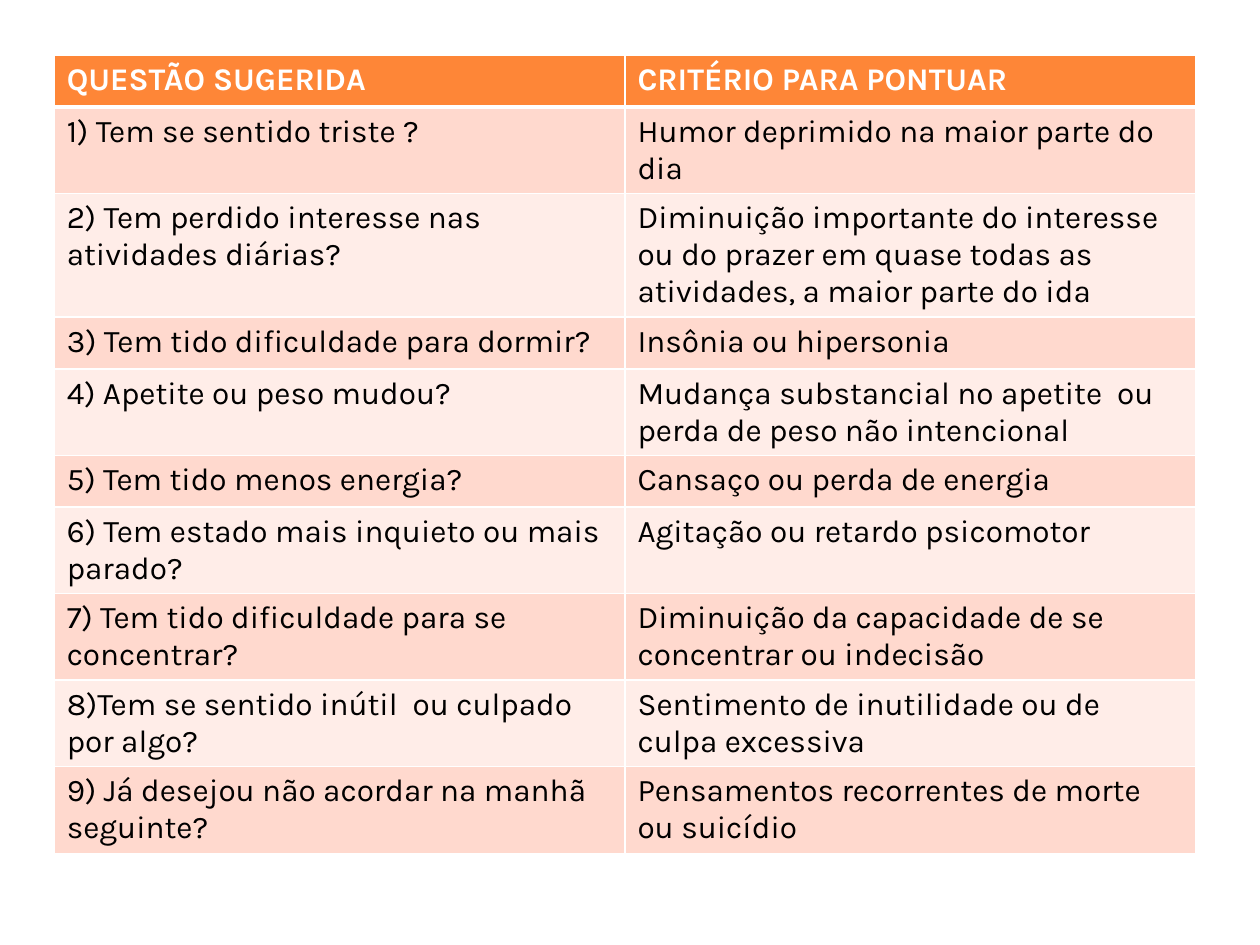
from lxml.etree import SubElement
from pptx import Presentation
from pptx.dml.color import RGBColor
from pptx.oxml.ns import qn
from pptx.util import Inches, Pt

# Content
HEADINGS = ("QUESTÃO SUGERIDA", "CRITÉRIO PARA PONTUAR")
CRITERIA = [
    ("1) Tem se sentido triste ?", "Humor deprimido na maior parte do dia"),
    ("2) Tem perdido interesse nas atividades diárias?",
     "Diminuição importante do interesse ou do prazer em quase todas as "
     "atividades, a maior parte do ida"),
    ("3) Tem tido dificuldade para dormir?", "Insônia ou hipersonia"),
    ("4) Apetite ou peso mudou?",
     "Mudança substancial no apetite  ou perda de peso não intencional"),
    ("5) Tem tido menos energia?", "Cansaço ou perda de energia"),
    ("6) Tem estado mais inquieto ou mais parado?",
     "Agitação ou retardo psicomotor"),
    ("7) Tem tido dificuldade para se concentrar?",
     "Diminuição da capacidade de se concentrar ou indecisão"),
    ("8)Tem se sentido inútil  ou culpado por algo?",
     "Sentimento de inutilidade ou de culpa excessiva"),
    ("9) Já desejou não acordar na manhã seguinte?",
     "Pensamentos recorrentes de morte ou suicídio"),
]

THEME = {
    "font": "Karla", "size": 18,
    "heading": "FE8637", "heading_text": "FFFFFF", "text": "000000",
    "bands": ("FFD9CE", "FFEDE8"),
    "border": "FFFFFF", "border_width": 1, "heading_rule": 3,
}
LEFT, TOP = 0.43, 0.44
COLUMN_WIDTH, ROW_HEIGHT = 4.53, 0.41


def write(cell, text, *, color, bold=False):
    paragraph = cell.text_frame.paragraphs[0]
    run = paragraph.add_run()
    run.text = text
    for font in (paragraph.font, run.font):
        font.name = THEME["font"]
        font.size = Pt(THEME["size"])
        font.bold = bold
        font.color.rgb = RGBColor.from_string(color)


def paint(cell, color, **edge_widths):
    # Borders go before the fill in the cell properties
    properties = cell._tc.get_or_add_tcPr()
    for edge in ("lnL", "lnR", "lnT", "lnB"):
        width = edge_widths.get(edge, THEME["border_width"])
        line = SubElement(properties, qn(f"a:{edge}"), w=str(Pt(width)))
        fill = SubElement(line, qn("a:solidFill"))
        SubElement(fill, qn("a:srgbClr"), val=THEME["border"])
    cell.fill.solid()
    cell.fill.fore_color.rgb = RGBColor.from_string(color)


def main():
    deck = Presentation()
    deck.slide_width, deck.slide_height = Inches(10), Inches(7.5)
    slide = deck.slides.add_slide(deck.slide_layouts[6])

    # Table grid
    rows = [HEADINGS, *CRITERIA]
    criteria_table = slide.shapes.add_table(
        len(rows), len(HEADINGS), Inches(LEFT), Inches(TOP),
        Inches(COLUMN_WIDTH * len(HEADINGS)), Inches(ROW_HEIGHT * len(rows)),
    ).table
    for column in criteria_table.columns:
        column.width = Inches(COLUMN_WIDTH)
    for row in criteria_table.rows:
        row.height = Inches(ROW_HEIGHT)

    # Heading row
    for column, heading in enumerate(HEADINGS):
        cell = criteria_table.cell(0, column)
        write(cell, heading, color=THEME["heading_text"], bold=True)
        paint(cell, THEME["heading"], lnB=THEME["heading_rule"])

    # Banded questions and criteria
    for number, pair in enumerate(CRITERIA, start=1):
        top_edge = THEME["heading_rule" if number == 1 else "border_width"]
        for column, text in enumerate(pair):
            cell = criteria_table.cell(number, column)
            write(cell, text, color=THEME["text"])
            paint(cell, THEME["bands"][(number - 1) % 2], lnT=top_edge)

    deck.save("out.pptx")


if __name__ == "__main__":
    main()
